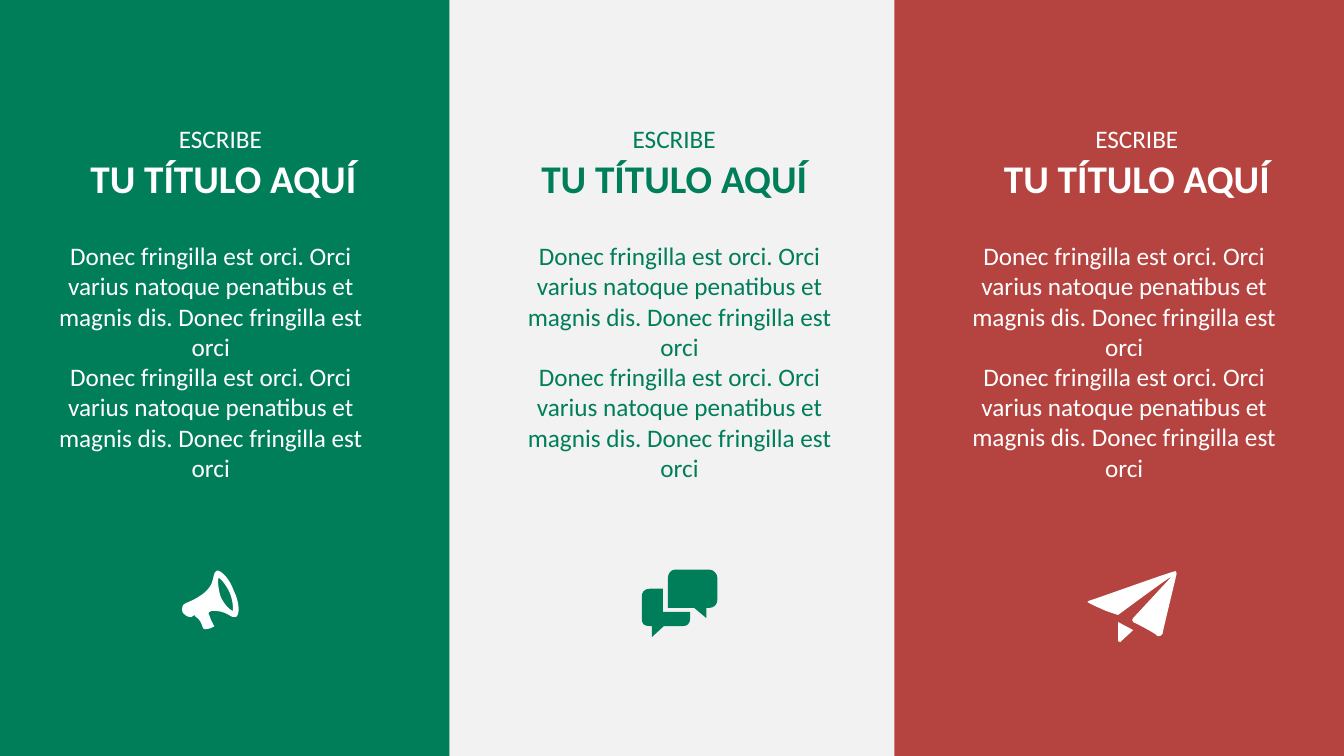
from lxml import etree
from pptx import Presentation
from pptx import util as u
from pptx.dml.color import RGBColor
from pptx.enum import shapes, text
from pptx.oxml.ns import qn

GREEN = RGBColor(0x00, 0x7E, 0x5A)
RED = RGBColor(0xB5, 0x43, 0x3F)
PALE = RGBColor(0xF2, 0xF2, 0xF2)
WHITE = RGBColor(0xFF, 0xFF, 0xFF)

SENTENCE = ("Donec fringilla est orci. Orci varius natoque penatibus et "
            "magnis dis. Donec fringilla est orci")
HEADING = "TU TÍTULO AQUÍ"

# Icon contours in hundredths of an inch: pairs are corners,
# sixes are curves (two control points and an end point)
MEGAPHONE = [
    [(52, 21), (48, 9, 39, 0, 35, 1), (28, 5, 39, 19, 5, 33),
     (1, 34, 0, 38, 1, 42), (2, 44, 7, 48, 10, 47), (13, 45),
     (15, 49, 17, 47, 17, 49), (19, 51, 21, 56, 21, 57),
     (22, 58, 23, 61, 24, 59), (26, 59, 30, 58, 31, 57),
     (33, 57, 33, 56, 32, 55), (32, 54, 30, 52, 30, 51),
     (29, 50, 28, 45, 27, 44), (26, 43, 28, 41, 30, 41),
     (46, 40, 49, 49, 54, 47), (58, 45, 58, 33, 52, 21)],
    [(51, 41), (50, 41, 43, 36, 39, 27), (36, 18, 36, 8, 37, 8),
     (38, 8, 44, 14, 48, 23), (52, 33, 51, 40, 51, 41)],
]
CHAT = [
    [(21, 42), (21, 19), (8, 19), (2, 19, 0, 23, 0, 27), (0, 48),
     (0, 54, 2, 56, 8, 56), (10, 56), (10, 67), (22, 56), (41, 56),
     (45, 56, 48, 54, 48, 48), (48, 42)],
    [(67, 0), (33, 0), (29, 0, 26, 4, 26, 8), (26, 38), (52, 38), (64, 48),
     (64, 38), (67, 38), (71, 38, 75, 35, 75, 30), (75, 8),
     (75, 4, 71, 0, 67, 0)],
]
PAPER_PLANE = [
    [(86, 2), (84, 2, 3, 31, 2, 31), (0, 31, 0, 33, 2, 33),
     (3, 34, 19, 41, 19, 41), (31, 45), (31, 45, 82, 7, 84, 7), (46, 48),
     (45, 50), (46, 52), (46, 52, 70, 64, 70, 66), (72, 66, 74, 66, 75, 64),
     (75, 62, 89, 5, 89, 4), (89, 2, 88, 0, 86, 2)],
    [(31, 71), (33, 72), (46, 60), (31, 52)],
]


class Canvas:
    """The slide, its font, and positions in percent of its size."""
    font = "Calibri"

    def __init__(self, deck):
        self.deck = deck
        self.page = deck.slides.add_slide(deck.slide_layouts.get_by_name("Comparison"))
        self.slots = {box.placeholder_format.idx: box for box in self.page.placeholders}

    def across(self, share):
        return u.Emu(round(self.deck.slide_width * share / 100))

    def down(self, share):
        return u.Emu(round(self.deck.slide_height * share / 100))

    def paint(self, shape, color):
        shape.shadow.inherit = False
        shape.fill.solid()
        shape.fill.fore_color.rgb = color
        shape.line.fill.background()

    def panel(self, left, width, color):
        shape = self.page.shapes.add_shape(
            shapes.MSO_SHAPE.RECTANGLE, self.across(left), 0,
            self.across(width), self.down(100))
        self.paint(shape, color)

    def words(self, slot, area, lines, color):
        """Fill a placeholder, or a text box if slot is None, above the panels."""
        left, top, width, height = area
        place = (self.across(left), self.down(top), self.across(width), self.down(height))
        if slot is None:
            box = self.page.shapes.add_textbox(*place)
        else:
            box = self.slots[slot]
            box.left, box.top, box.width, box.height = place
            box.element.getparent().append(box.element)
        frame = box.text_frame
        frame.word_wrap = True
        frame.auto_size = text.MSO_AUTO_SIZE.SHAPE_TO_FIT_TEXT
        frame.vertical_anchor = text.MSO_ANCHOR.TOP
        frame.text = "\n".join(line for line, size, bold in lines)
        for para, (line, size, bold) in zip(frame.paragraphs, lines):
            para.alignment = text.PP_ALIGN.CENTER
            para.space_before = u.Pt(0)
            para.font.name, para.font.size, para.font.bold = self.font, u.Pt(size), bold
            para.font.color.rgb = color
            # No bullet or hanging indent
            properties = para._p.get_or_add_pPr()
            properties.set("marL", "0")
            properties.set("indent", "0")
            bullet = properties.makeelement(qn("a:buNone"), {})
            properties.insert_element_before(bullet, "a:tabLst", "a:defRPr", "a:extLst")

    def icon(self, left, top, contours, color):
        ends = [[part[-2:] for part in contour] for contour in contours]
        builder = self.page.shapes.build_freeform(*ends[0][0], scale=u.Inches(0.01))
        for number, outline in enumerate(ends):
            if number:
                builder.move_to(*outline[0])
            builder.add_line_segments(outline[1:], close=False)
            builder.add_line_segments([], close=True)
        shape = builder.convert_to_shape(self.across(left), self.down(top))
        self.paint(shape, color)

        # Bend the straight segments that have control points
        min_x = min(x for outline in ends for x, y in outline)
        min_y = min(y for outline in ends for x, y in outline)
        segments = [node for node in shape.element.iter(qn("a:moveTo"), qn("a:lnTo"))]
        parts = [part for contour in contours for part in contour]
        for segment, part in zip(segments, parts):
            if len(part) == 6:
                segment.tag = qn("a:cubicBezTo")
                for index in (0, 2):
                    point = etree.Element(qn("a:pt"), x=str(part[index] - min_x),
                                          y=str(part[index + 1] - min_y))
                    segment.insert(index // 2, point)


def main():
    deck = Presentation()
    deck.slide_width, deck.slide_height = u.Inches(13.33), u.Inches(7.5)
    canvas = Canvas(deck)

    # Panel left, width, fill; ink; heading slot, left, kicker; body slot, left; icon
    columns = [
        (0, 33.46, GREEN, WHITE, 0, 5.1, "ESCRIBE ", 2, 3.23, 13.5, MEGAPHONE),
        (33.46, 33.08, PALE, GREEN, 1, 38.65, "ESCRIBE", 4, 38.11, 47.75, CHAT),
        (66.54, 33.46, RED, WHITE, 3, 73.07, "ESCRIBE", None, 71.19, 80.87, PAPER_PLANE),
    ]
    for (left, width, fill, ink, heading_slot, heading_left, kicker,
         body_slot, body_left, icon_left, contours) in columns:
        canvas.panel(left, width, fill)
        canvas.words(heading_slot, (heading_left, 15.68, 23.03, 11.73),
                     [(kicker, 18, False), (HEADING, 28, True)], ink)
        canvas.words(body_slot, (body_left, 31.14, 24.91, 37.73),
                     [(SENTENCE, 18, False)] * 2, ink)
        canvas.icon(icon_left, 75.35, contours, ink)

    deck.save("out.pptx")


if __name__ == "__main__":
    main()
